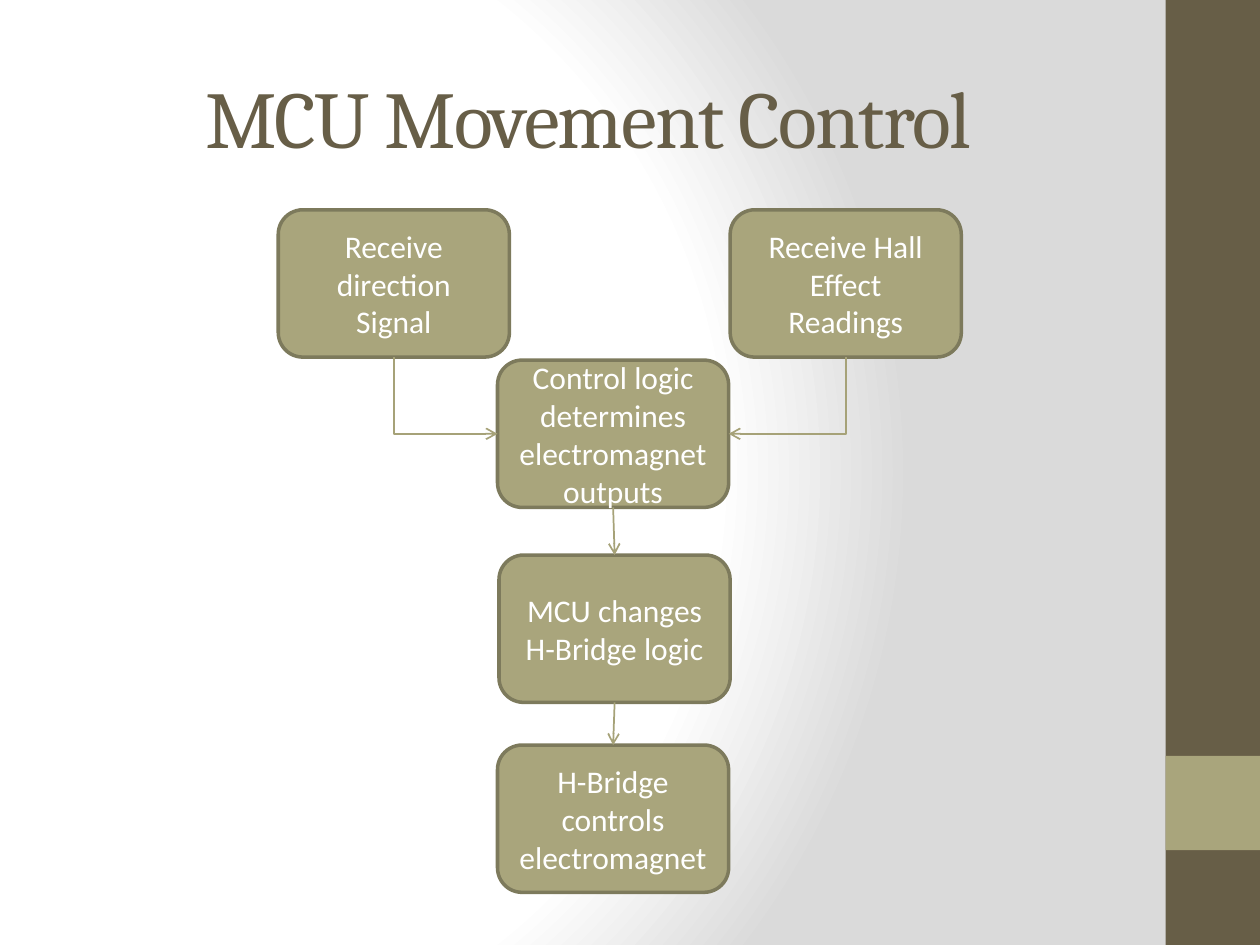
from lxml.etree import SubElement
from pptx import Presentation
from pptx.dml.color import RGBColor
from pptx.enum.shapes import MSO_CONNECTOR as Link, MSO_SHAPE as Preset
from pptx.enum.text import MSO_ANCHOR as Anchor, PP_ALIGN as Align
from pptx.oxml import parse_xml
from pptx.oxml.ns import nsdecls, qn
from pptx.util import Cm, Pt

WHITE = RGBColor(0xFF, 0xFF, 0xFF)
BROWN = RGBColor(0x67, 0x5E, 0x47)
OLIVE = RGBColor(0xA9, 0xA5, 0x7C)
OUTLINE = RGBColor(0x7D, 0x7A, 0x5C)
ARROW = RGBColor(0xA6, 0xA2, 0x78)

TITLE_FONT = {"name": "Cambria", "size": Pt(46)}
STEP_FONT = {"name": "Calibri", "size": Pt(18)}
STEP_WIDTH, STEP_HEIGHT = 4.66, 2.97
TOP, LEFT, BOTTOM, RIGHT = range(4)

GLOW = f"""<a:gradFill {nsdecls('a')} rotWithShape="1"><a:gsLst>
<a:gs pos="0"><a:srgbClr val="FFFFFF"/></a:gs>
<a:gs pos="75000"><a:srgbClr val="FFFFFF"/></a:gs>
<a:gs pos="100000"><a:srgbClr val="DADADA"/></a:gs></a:gsLst>
<a:path path="circle"><a:fillToRect l="20000" t="50000" r="100000" b="50000"/></a:path>
</a:gradFill>"""


class FlowSlide:
    def __init__(self, slide):
        self.slide = slide
        self.shapes = slide.shapes

    def background(self):
        self.slide.background.fill.solid()
        properties = self.slide._element.xpath(".//p:bgPr")[0]
        properties.replace(properties[0], parse_xml(GLOW))

    def label(self, shape, text, font, color):
        frame = shape.text_frame
        frame.word_wrap = True
        frame.vertical_anchor = Anchor.MIDDLE
        paragraph = frame.paragraphs[0]
        paragraph.alignment = Align.CENTER
        run = paragraph.add_run()
        run.text = text
        for attribute, value in font.items():
            setattr(run.font, attribute, value)
        run.font.color.rgb = color
        return run

    def title(self, text, *box):
        heading = self.shapes.add_textbox(*map(Cm, box))
        run = self.label(heading, text, TITLE_FONT, BROWN)
        run.font._element.set("spc", "-100")

    def block(self, preset, color, *box):
        block = self.shapes.add_shape(preset, *map(Cm, box))
        block.shadow.inherit = False
        block.fill.solid()
        block.fill.fore_color.rgb = color
        block.line.fill.background()
        return block

    def step(self, text, left, top):
        step = self.block(Preset.ROUNDED_RECTANGLE, OLIVE,
                          left, top, STEP_WIDTH, STEP_HEIGHT)
        step.line.color.rgb = OUTLINE
        step.line.width = Pt(2)
        self.label(step, text, STEP_FONT, WHITE)
        return step

    def arrow(self, source, target, source_side=BOTTOM, target_side=TOP,
              kind=Link.STRAIGHT):
        arrow = self.shapes.add_connector(kind, 0, 0, 0, 0)
        arrow.begin_connect(source, source_side)
        arrow.end_connect(target, target_side)
        arrow.line.color.rgb = ARROW
        arrow.line.width = Pt(1)
        SubElement(arrow.line._get_or_add_ln(), qn("a:tailEnd"), type="arrow")
        SubElement(arrow._element.spPr, qn("a:effectLst"))
        return arrow

    def corner_arrow(self, source, target, target_side):
        """Go down from the source, then turn once into the target's side."""
        arrow = self.arrow(source, target, BOTTOM, target_side, Link.ELBOW)
        across, down = arrow.width, arrow.height
        middle_x = arrow.left + across // 2
        middle_y = arrow.top + down // 2
        # The preset runs across first, so it is turned by a quarter.
        arrow.left, arrow.top = middle_x - down // 2, middle_y - across // 2
        arrow.width, arrow.height = down, across
        properties = arrow._element.spPr
        properties.find(qn("a:prstGeom")).set("prst", "bentConnector2")
        frame = properties.find(qn("a:xfrm"))
        enters_left = target_side == LEFT
        frame.set("rot", "16200000" if enters_left else "5400000")
        frame.set("flipH", "1" if enters_left else "0")


def main():
    deck = Presentation()
    deck.slide_width, deck.slide_height = Cm(25.4), Cm(19.05)
    flow = FlowSlide(deck.slides.add_slide(deck.slide_layouts[6]))

    flow.background()
    flow.block(Preset.RECTANGLE, BROWN, 23.5, 0, 1.9, 19.05)
    flow.block(Preset.RECTANGLE, OLIVE, 23.5, 15.24, 1.9, 1.9)
    flow.title("MCU Movement Control", 1.27, 0.76, 21.17, 3.18)

    control = flow.step("Control logic determines electromagnet outputs", 10.03, 7.26)
    direction = flow.step("Receive direction Signal", 5.61, 4.23)
    hall = flow.step("Receive Hall Effect Readings", 14.72, 4.23)
    change = flow.step("MCU changes H-Bridge logic", 10.06, 11.19)
    bridge = flow.step("H-Bridge controls electromagnet", 10.03, 15.02)

    flow.corner_arrow(direction, control, LEFT)
    flow.corner_arrow(hall, control, RIGHT)
    flow.arrow(control, change)
    flow.arrow(change, bridge)

    deck.save("out.pptx")


if __name__ == "__main__":
    main()
